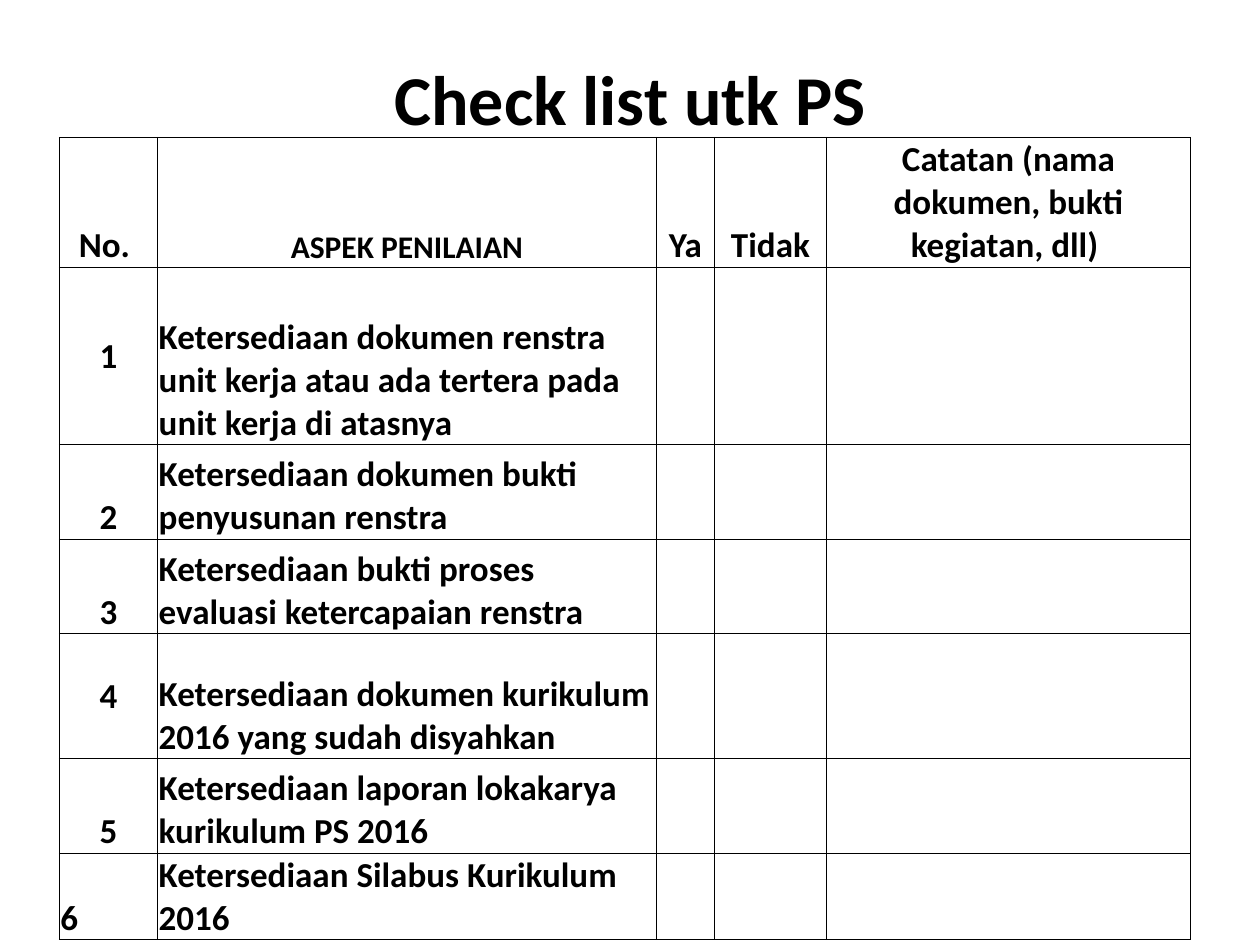
"""Build the study-programme checklist slide."""
from lxml import etree
from pptx import Presentation
from pptx import util as u
from pptx.dml.color import RGBColor
from pptx.enum import text
from pptx.oxml.ns import qn

COLOURS = {"ink": "000000"}
COLUMN_WIDTHS = [0.78, 3.96, 0.46, 0.89, 2.89]
ROW_HEIGHTS = [1.03, 1.41, 0.75, 0.75, 0.99, 0.75, 0.69]
HEADINGS = ["No. ", "ASPEK PENILAIAN", "Ya", "Tidak",
            "Catatan (nama dokumen, bukti kegiatan, dll) "]
ASPECTS = [
    "Ketersediaan dokumen renstra unit kerja atau ada tertera pada unit kerja di atasnya",
    "Ketersediaan dokumen bukti penyusunan renstra",
    "Ketersediaan bukti proses evaluasi ketercapaian renstra",
    "Ketersediaan dokumen kurikulum 2016 yang sudah disyahkan",
    "Ketersediaan laporan lokakarya kurikulum PS 2016",
    "Ketersediaan Silabus Kurikulum 2016",
]
MIDDLE_NUMBERS = {1, 4}
LEFT_NUMBERS = {6}
CELL_FORMAT = {
    "margin_left": u.Inches(0.01),
    "margin_right": u.Inches(0.01),
    "margin_top": u.Inches(0.01),
    "margin_bottom": 0,
}


def apply_format(target, values):
    """Set each named attribute on the target."""
    for name, value in values.items():
        setattr(target, name, value)


def write_text(frame, wording, size, align):
    """Write one bold paragraph into a text frame."""
    paragraph = frame.paragraphs[0]
    paragraph.alignment = align
    run = paragraph.add_run()
    run.text = wording
    apply_format(run.font, {"name": "Calibri", "size": u.Pt(size), "bold": True})
    run.font.color.rgb = RGBColor.from_string(COLOURS["ink"])


def add_title(slide, wording):
    """Add the centred slide title."""
    title = slide.shapes.add_textbox(
        u.Inches(0.5), u.Inches(0.3), u.Inches(9), u.Inches(0.95))
    apply_format(title.text_frame, {
        "word_wrap": True, "vertical_anchor": text.MSO_ANCHOR.MIDDLE})
    write_text(title.text_frame, wording, 40, text.PP_ALIGN.CENTER)


def draw_borders(cell):
    """Draw a thin line on all four sides of a cell."""
    properties = cell._tc.get_or_add_tcPr()
    for position, side in enumerate(("lnL", "lnR", "lnT", "lnB")):
        border = etree.Element(qn(f"a:{side}"), w=str(u.Pt(0.5)))
        fill = etree.SubElement(border, qn("a:solidFill"))
        etree.SubElement(fill, qn("a:srgbClr"), val=COLOURS["ink"])
        properties.insert(position, border)


def fill_cell(cell, wording, size=20, align=text.PP_ALIGN.LEFT,
              anchor=text.MSO_ANCHOR.BOTTOM):
    """Write and align the wording of one cell."""
    apply_format(cell, {**CELL_FORMAT, "vertical_anchor": anchor})
    write_text(cell.text_frame, wording, size, align)


def add_checklist(slide):
    """Add the checklist table with its headings and numbered aspects."""
    checklist = slide.shapes.add_table(
        len(ROW_HEIGHTS), len(COLUMN_WIDTHS), u.Inches(0.47), u.Inches(1.09),
        u.Inches(sum(COLUMN_WIDTHS)), u.Inches(sum(ROW_HEIGHTS))).table
    apply_format(checklist, {"first_row": False, "horz_banding": False})
    for column, width in zip(checklist.columns, COLUMN_WIDTHS):
        column.width = u.Inches(width)
    for row, height in zip(checklist.rows, ROW_HEIGHTS):
        row.height = u.Inches(height)
    for cell in checklist.iter_cells():
        cell.fill.background()
        draw_borders(cell)

    for index, heading in enumerate(HEADINGS):
        fill_cell(checklist.cell(0, index), heading,
                  size=18 if index == 1 else 20, align=text.PP_ALIGN.CENTER)
    for number, aspect in enumerate(ASPECTS, start=1):
        align = text.PP_ALIGN.LEFT if number in LEFT_NUMBERS else text.PP_ALIGN.CENTER
        anchor = (text.MSO_ANCHOR.MIDDLE if number in MIDDLE_NUMBERS
                  else text.MSO_ANCHOR.BOTTOM)
        fill_cell(checklist.cell(number, 0), str(number), align=align, anchor=anchor)
        fill_cell(checklist.cell(number, 1), aspect)


def main():
    """Build and save the slide."""
    deck = Presentation()
    apply_format(deck, {"slide_width": u.Inches(10), "slide_height": u.Inches(7.5)})
    slide = deck.slides.add_slide(deck.slide_layouts[6])
    add_title(slide, "Check list utk PS")
    add_checklist(slide)
    deck.save("out.pptx")


if __name__ == "__main__":
    main()
